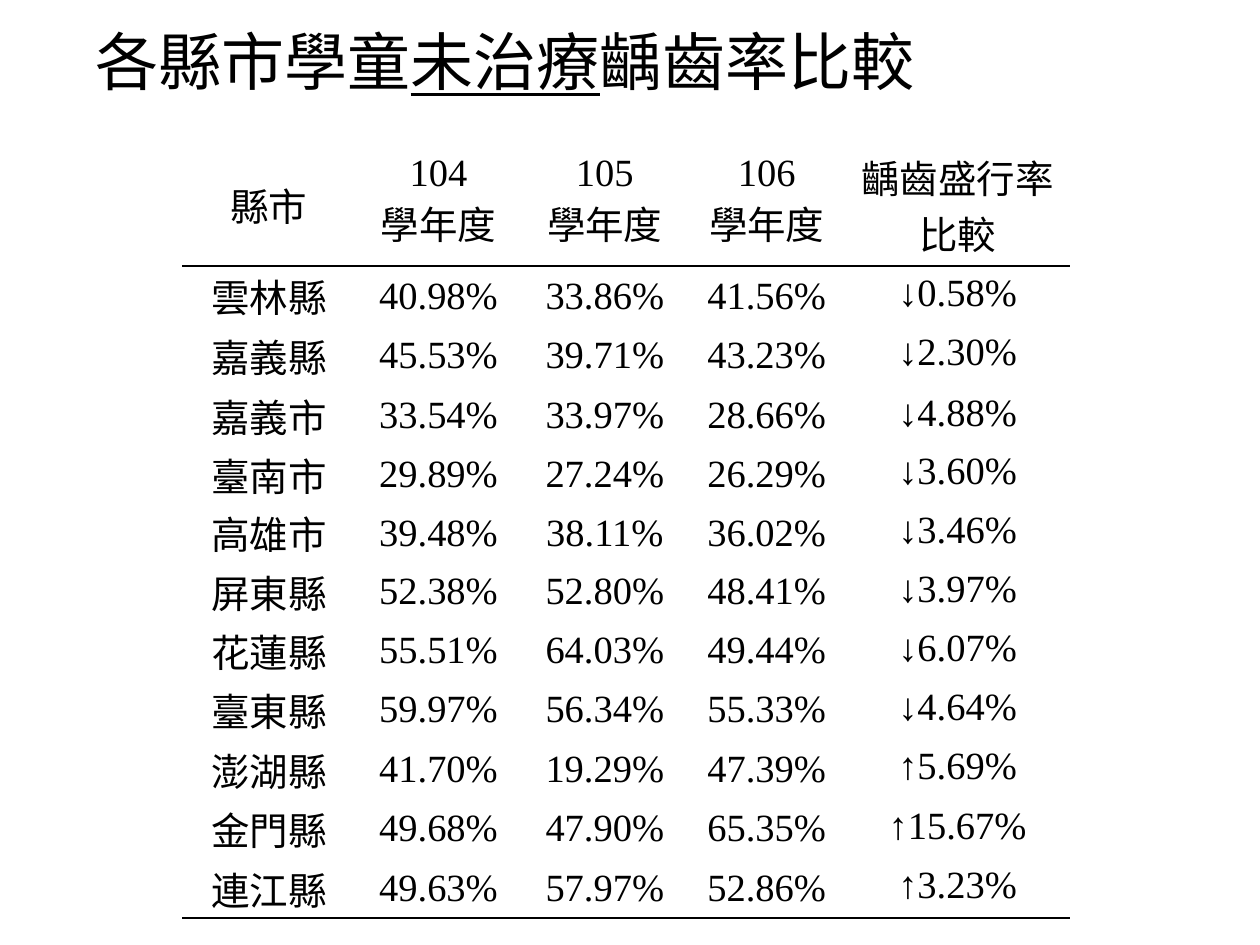
from dataclasses import dataclass

from lxml import etree
from pptx import Presentation
from pptx import util as u
from pptx.dml import color
from pptx.enum import text
from pptx.oxml import ns


@dataclass(frozen=True)
class Theme:
    ink: str = "000000"
    paper: str = "FFFFFF"
    latin: str = "Times New Roman"
    chinese: str = "Noto Sans CJK SC"
    title_size: float = 36
    table_size: float = 22
    rule_width: float = 1.5
    plain_table: str = "{2D5ABB26-0587-4C30-8999-92F81FD0307C}"


THEME = Theme()
WIDTH, HEIGHT = 10, 7.5

TITLE = [("各縣市學童", False), ("未治療", True), ("齲齒率比較", False)]
HEADINGS = ["縣市", "104\n學年度", "105\n學年度", "106\n學年度", "齲齒盛行率\n比較"]
RATES = [
    ("雲林縣", "40.98%", "33.86%", "41.56%", "↓0.58%"),
    ("嘉義縣", "45.53%", "39.71%", "43.23%", "↓2.30%"),
    ("嘉義市", "33.54%", "33.97%", "28.66%", "↓4.88%"),
    ("臺南市", "29.89%", "27.24%", "26.29%", "↓3.60%"),
    ("高雄市", "39.48%", "38.11%", "36.02%", "↓3.46%"),
    ("屏東縣", "52.38%", "52.80%", "48.41%", "↓3.97%"),
    ("花蓮縣", "55.51%", "64.03%", "49.44%", "↓6.07%"),
    ("臺東縣", "59.97%", "56.34%", "55.33%", "↓4.64%"),
    ("澎湖縣", "41.70%", "19.29%", "47.39%", "↑5.69%"),
    ("金門縣", "49.68%", "47.90%", "65.35%", "↑15.67%"),
    ("連江縣", "49.63%", "57.97%", "52.86%", "↑3.23%"),
]
COLUMN_WIDTHS = [1.38, 1.31, 1.33, 1.24, 1.79]
HEADER_HEIGHT, ROW_HEIGHT, TALL_ROW_HEIGHT = 0.98, 0.46, 0.48
TALL_ROWS = {2, 9, 11}


def add_text(paragraph, words, *, size, latin=THEME.latin, underline=False, align=None):
    """Append one formatted run to a paragraph."""
    paragraph.alignment = align
    run = paragraph.add_run()
    run.text = words
    run.font.size = u.Pt(size)
    run.font.bold = False
    run.font.underline = underline
    run.font.color.rgb = color.RGBColor.from_string(THEME.ink)
    run.font.name = latin
    properties = run.font._element
    etree.SubElement(properties, ns.qn("a:ea"), typeface=THEME.chinese)


def add_bottom_rule(cell):
    line = etree.Element(ns.qn("a:lnB"), w=str(u.Pt(THEME.rule_width)))
    fill = etree.SubElement(line, ns.qn("a:solidFill"))
    etree.SubElement(fill, ns.qn("a:srgbClr"), val=THEME.ink)
    cell._tc.get_or_add_tcPr().insert(0, line)


def add_title(slide, left, top, width, height):
    box = slide.shapes.add_textbox(*map(u.Inches, (left, top, width, height)))
    frame = box.text_frame
    frame.word_wrap = True
    frame.vertical_anchor = text.MSO_ANCHOR.MIDDLE
    paragraph = frame.paragraphs[0]
    paragraph.line_spacing = 0.9
    for words, underline in TITLE:
        add_text(paragraph, words, size=THEME.title_size, latin=THEME.chinese,
                 underline=underline)


def fill_cell(cell, words, *, compact, anchor):
    cell.fill.solid()
    cell.fill.fore_color.rgb = color.RGBColor.from_string(THEME.paper)
    cell.vertical_anchor = anchor
    if compact:
        cell.margin_left = cell.margin_right = cell.margin_top = u.Inches(0.01)
        cell.margin_bottom = 0
    frame = cell.text_frame
    for index, line in enumerate(words.split("\n")):
        paragraph = frame.add_paragraph() if index else frame.paragraphs[0]
        add_text(paragraph, line, size=THEME.table_size, align=text.PP_ALIGN.CENTER)


def add_rate_table(slide, left, top, width, height):
    rows = [HEADINGS, *RATES]
    last_row, last_column = len(rows) - 1, len(HEADINGS) - 1
    table = slide.shapes.add_table(
        len(rows), len(HEADINGS), *map(u.Inches, (left, top, width, height))).table
    table.first_row = table.horz_banding = False
    table._tbl.tblPr.find(ns.qn("a:tableStyleId")).text = THEME.plain_table

    # Grid
    scale = width / sum(COLUMN_WIDTHS)
    for column, share in zip(table.columns, COLUMN_WIDTHS):
        column.width = u.Inches(share * scale)
    for index, row in enumerate(table.rows):
        body_height = TALL_ROW_HEIGHT if index in TALL_ROWS else ROW_HEIGHT
        row.height = u.Inches(body_height if index else HEADER_HEIGHT)

    # Cells, with rules below the header and below the last county
    for row, values in enumerate(rows):
        for column, words in enumerate(values):
            cell = table.cell(row, column)
            comparison = column == last_column
            fill_cell(cell, words, compact=row > 0 and not comparison,
                      anchor=text.MSO_ANCHOR.TOP if comparison else text.MSO_ANCHOR.MIDDLE)
            if row in (0, last_row):
                add_bottom_rule(cell)

    # Year headings sit slightly above the middle
    for column in range(1, last_column):
        table.cell(0, column).margin_bottom = u.Inches(0.1)


def main():
    presentation = Presentation()
    presentation.slide_width = u.Inches(WIDTH)
    presentation.slide_height = u.Inches(HEIGHT)
    slide = presentation.slides.add_slide(presentation.slide_layouts[6])
    add_title(slide, 0.066 * WIDTH, 0, 0.862 * WIDTH, 0.137 * HEIGHT)
    add_rate_table(slide, 0.1445 * WIDTH, 0.151 * HEIGHT, 0.705 * WIDTH, 0.8 * HEIGHT)
    presentation.save("out.pptx")


if __name__ == "__main__":
    main()
